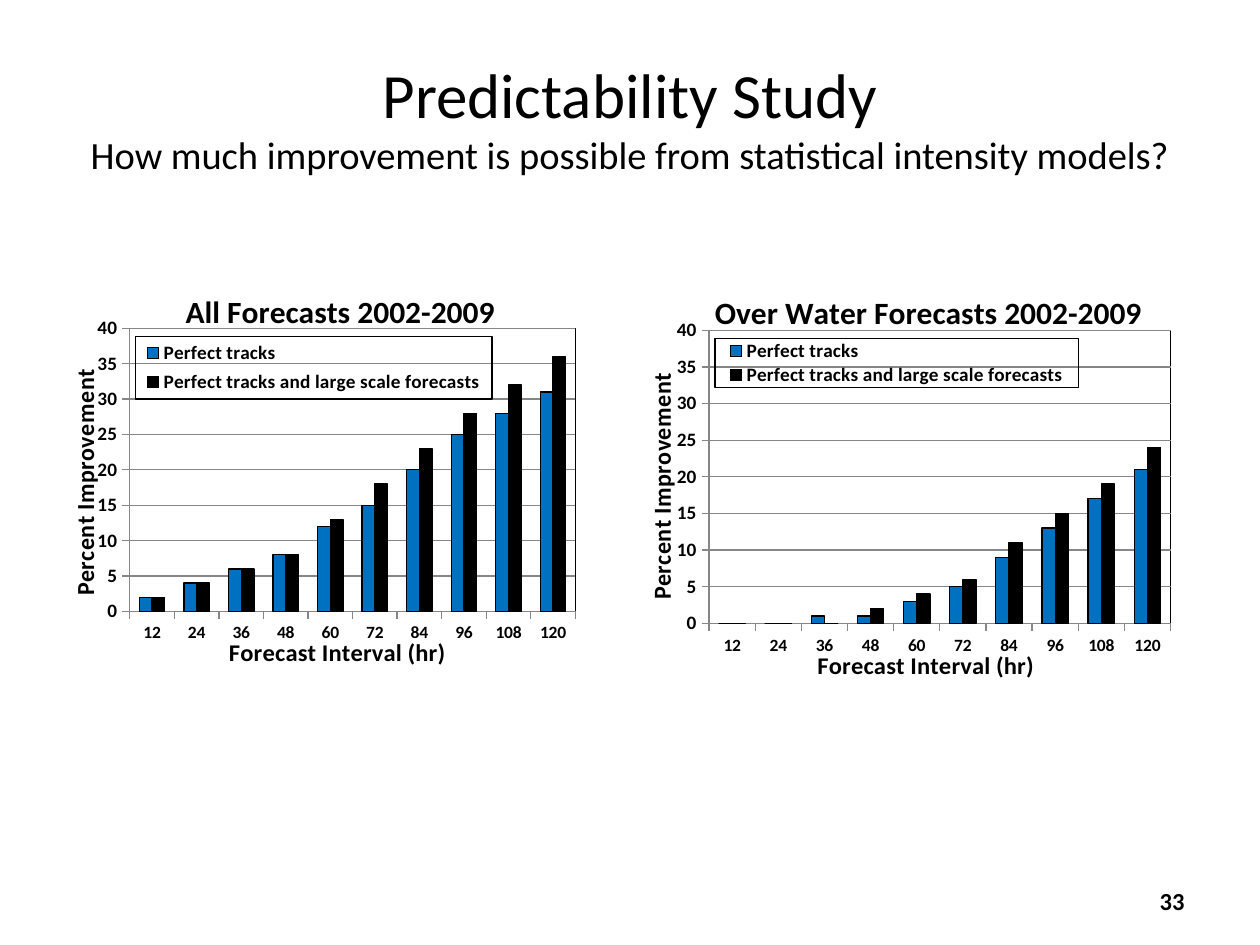
from dataclasses import dataclass

from lxml.etree import SubElement
from pptx import Presentation
from pptx.chart.data import CategoryChartData
from pptx.dml.color import RGBColor
from pptx.enum.chart import XL_CHART_TYPE, XL_LEGEND_POSITION, XL_TICK_MARK
from pptx.enum.text import MSO_ANCHOR, PP_ALIGN
from pptx.oxml import parse_xml
from pptx.oxml.ns import nsdecls, qn
from pptx.util import Cm, Pt

BLACK = RGBColor(0x00, 0x00, 0x00)
BLUE = RGBColor(0x00, 0x70, 0xC0)
GRAY = RGBColor(0x86, 0x86, 0x86)
FONT = "Calibri"
HOURS = [str(hour) for hour in range(12, 121, 12)]
SERIES = {"Perfect tracks": BLUE, "Perfect tracks and large scale forecasts": BLACK}
PLOT_LAYOUT = (0.12, 0.14, 0.79, 0.7)
VALUE_SCALE = {"minimum_scale": 0, "maximum_scale": 40, "major_unit": 5}
TICKS = {"major_tick_mark": XL_TICK_MARK.OUTSIDE, "minor_tick_mark": XL_TICK_MARK.NONE}
OUTLINE = '<a:ln w="9525"><a:solidFill><a:srgbClr val="000000"/></a:solidFill></a:ln>'
NO_LINE = "<a:ln><a:noFill/></a:ln>"
PLOT_LAYOUT = (0.12, 0.14, 0.8, 0.72)


@dataclass
class ForecastChart:
    """One chart: box in cm, inner positions as fractions of the chart."""
    title: str
    box: tuple[float, float, float, float]
    values: tuple[list[int], list[int]]
    title_at: tuple[float, float]
    hours_at: tuple[float, float]
    percent_at: tuple[float, float]
    legend_at: tuple[float, float, float, float]


CHARTS = [
    ForecastChart("All Forecasts 2002-2009", (1.27, 5.51, 11.23, 8.1),
                  ([2, 4, 6, 8, 12, 15, 20, 25, 28, 31],
                   [2, 4, 6, 8, 13, 18, 23, 28, 32, 36]),
                  (0.21, 0.03), (0.29, 0.91), (0, 0.23), (0.13, 0.16, 0.64, 0.16)),
    ForecastChart("Over Water Forecasts 2002-2009", (12.9, 5.51, 11.63, 8.36),
                  ([0, 0, 1, 1, 3, 5, 9, 13, 17, 21],
                   [0, 0, 0, 2, 4, 6, 11, 15, 19, 24]),
                  (0.12, 0.03), (0.3, 0.91), (0, 0.23), (0.13, 0.16, 0.63, 0.12)),
]


def apply(target, values: dict) -> None:
    for name, value in values.items():
        setattr(target, name, value)


def set_font(font, size: float, bold: bool = True) -> None:
    apply(font, {"name": FONT, "size": Pt(size), "bold": bold})
    font.color.rgb = BLACK


def place(element, after: str | None, at: tuple, inner: bool = False) -> None:
    """Give a chart part a fixed position, and a size when four numbers come."""
    for old in element.findall(qn("c:layout")):
        element.remove(old)
    layout = parse_xml(f"<c:layout {nsdecls('c')}/>")
    manual = SubElement(layout, qn("c:manualLayout"))
    settings = [("layoutTarget", "inner")] if inner else []
    settings += [("xMode", "edge"), ("yMode", "edge")]
    settings += list(zip("xywh", at))
    for tag, value in settings:
        SubElement(manual, qn(f"c:{tag}")).set("val", str(value))
    if after:
        element.find(qn(after)).addnext(layout)
    else:
        element.insert(0, layout)


def outline(line: str):
    return parse_xml(f"<c:spPr {nsdecls('c', 'a')}><a:noFill/>{line}</c:spPr>")


def write_title(owner, text: str, size: float, at: tuple[float, float]) -> None:
    title = owner.chart_title if hasattr(owner, "chart_title") else owner.axis_title
    title.text_frame.text = text
    set_font(title.text_frame.paragraphs[0].runs[0].font, size)
    place(title._element, "c:tx", at)


def add_text(slide, box: tuple, lines: list[tuple[str, float]], align, bold: bool) -> None:
    frame = slide.shapes.add_textbox(*map(Cm, box)).text_frame
    apply(frame, {"word_wrap": True, "vertical_anchor": MSO_ANCHOR.MIDDLE})
    paragraph = frame.paragraphs[0]
    paragraph.alignment = align
    for index, (text, size) in enumerate(lines):
        if index:
            paragraph.add_line_break()
        run = paragraph.add_run()
        run.text = text
        set_font(run.font, size, bold)


def add_forecast_chart(slide, study: ForecastChart) -> None:
    chart_data = CategoryChartData()
    chart_data.categories = HOURS
    for name, values in zip(SERIES, study.values):
        chart_data.add_series(name, values)
    chart = slide.shapes.add_chart(
        XL_CHART_TYPE.COLUMN_CLUSTERED, *map(Cm, study.box), chart_data).chart
    set_font(chart.font, 10)
    chart._chartSpace.find(qn("c:txPr")).addprevious(outline(NO_LINE))

    # Columns
    columns = chart.plots[0]
    apply(columns, {"gap_width": 150, "overlap": 0, "vary_by_categories": False})
    for series, color in zip(columns.series, SERIES.values()):
        series.format.fill.solid()
        series.format.fill.fore_color.rgb = color
        series.format.line.color.rgb = BLACK
        series.format.line.width = Pt(0.75)

    # Axes
    hours, percent = chart.category_axis, chart.value_axis
    for axis, label_size in ((hours, 10), (percent, 11)):
        apply(axis, TICKS)
        set_font(axis.tick_labels.font, label_size)
        axis.format.line.color.rgb = GRAY
    apply(percent, VALUE_SCALE)
    percent.major_gridlines.format.line.color.rgb = GRAY

    # Titles
    write_title(chart, study.title, 18, study.title_at)
    write_title(hours, "Forecast Interval (hr)", 14, study.hours_at)
    write_title(percent, "Percent Improvement ", 14, study.percent_at)

    # Legend
    chart.has_legend = True
    legend = chart.legend
    apply(legend, {"position": XL_LEGEND_POSITION.RIGHT, "include_in_layout": False})
    set_font(legend.font, 11)
    place(legend._element, "c:legendPos", study.legend_at)
    legend._element.find(qn("c:txPr")).addprevious(outline(OUTLINE))

    # Plot area
    plot_area = chart._chartSpace.find(f"{qn('c:chart')}/{qn('c:plotArea')}")
    place(plot_area, None, PLOT_LAYOUT, inner=True)
    plot_area.append(outline(OUTLINE))


def main() -> None:
    presentation = Presentation()
    apply(presentation, {"slide_width": Cm(25.4), "slide_height": Cm(19.05)})
    slide = presentation.slides.add_slide(presentation.slide_layouts[6])

    # Heading and page number
    heading = [
        ("Predictability Study", 36),
        ("How much improvement is possible from statistical intensity models?", 22),
    ]
    add_text(slide, (1.27, 0.76, 22.86, 3.18), heading, PP_ALIGN.CENTER, False)
    add_text(slide, (18.21, 17.65, 5.92, 1.02), [("33", 14)], PP_ALIGN.RIGHT, True)

    # Forecast charts
    for study in CHARTS:
        add_forecast_chart(slide, study)

    presentation.save("out.pptx")


if __name__ == "__main__":
    main()
